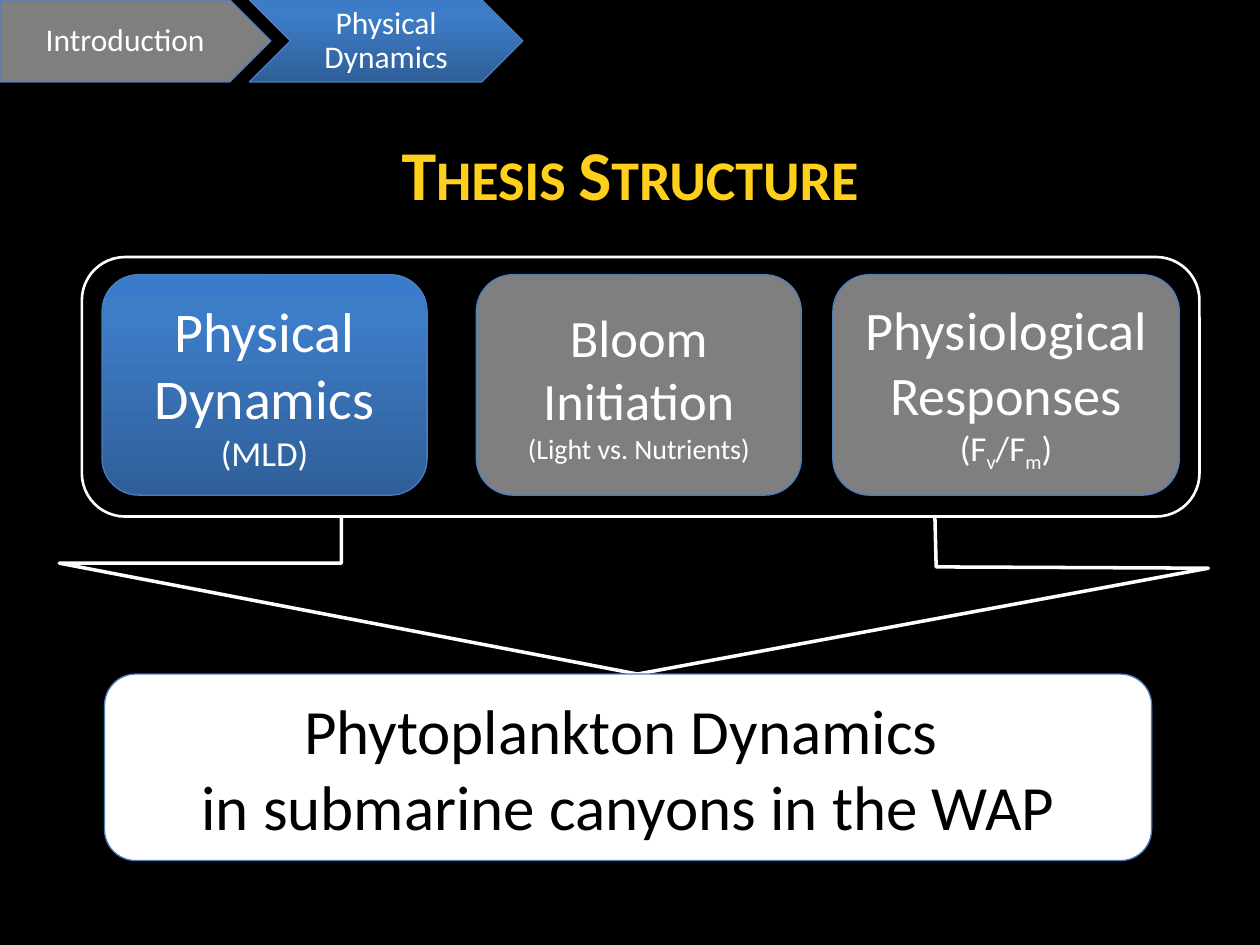
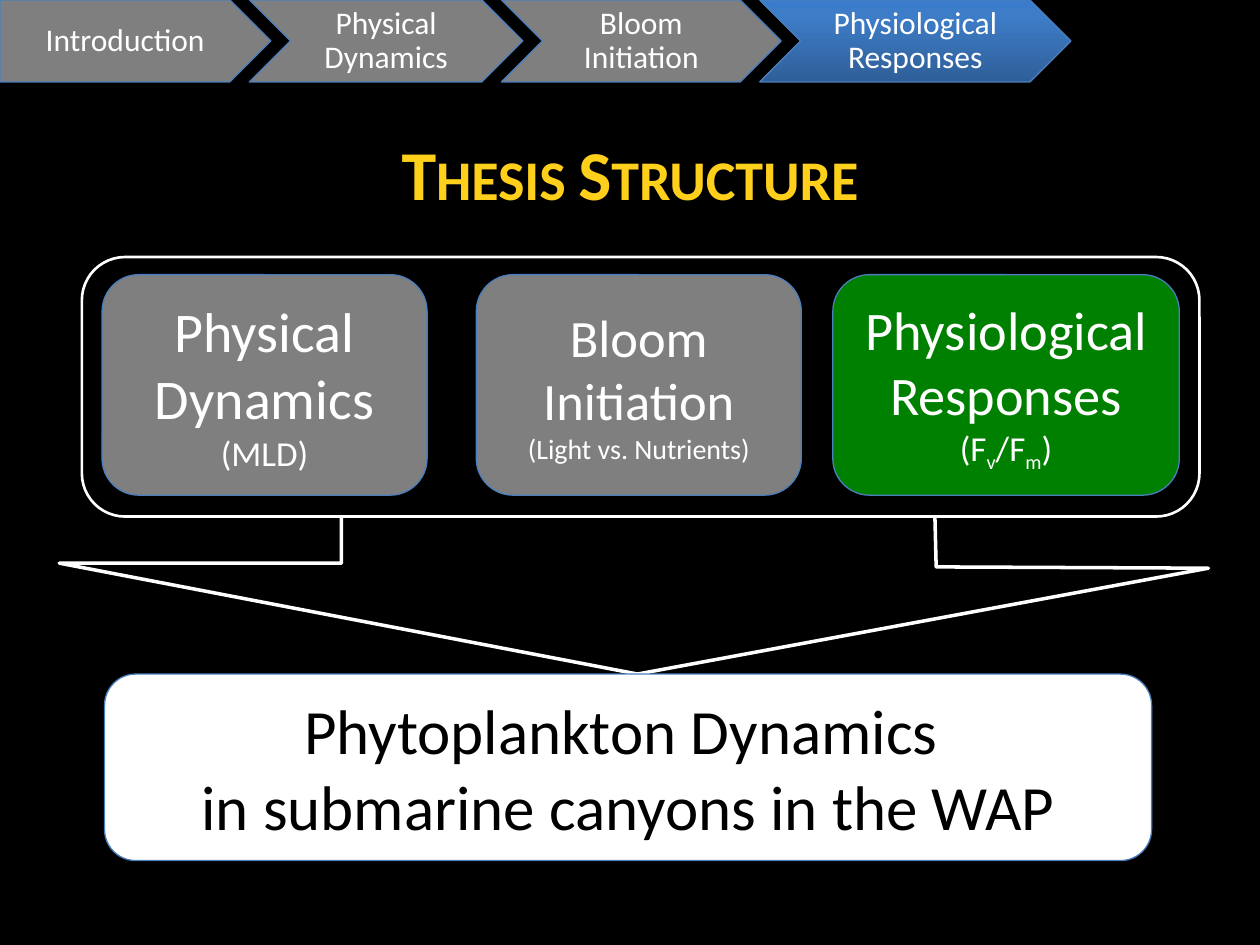
"""Build two thesis-structure slides with a growing chapter trail."""
from copy import deepcopy

from pptx import Presentation
from pptx.dml.color import RGBColor
from pptx.enum.shapes import MSO_SHAPE as Shape
from pptx.enum.text import MSO_ANCHOR as Anchor, PP_ALIGN as Align
from pptx.oxml.ns import qn
from pptx.util import Inches, Pt

TITLE = "Thesis Structure"
CHAPTERS = [
    (["Introduction"], 2.15),
    (["Physical Dynamics"], 2.17),
    (["Bloom", "Initiation"], 2.22),
    (["Physiological Responses"], 2.47),
]
TOPICS = [
    (0.81, 2.58, [(["Physical Dynamics"], 32), (["(MLD)"], 20)]),
    (3.78, 2.58, [(["Bloom Initiation"], 30), (["(Light vs. Nutrients)"], 16)]),
    (6.61, 2.75, [(["Physiological Responses"], 31),
                  (["(F", "_v", "/F", "_m", ")"], 20)]),
]
GOAL = [(["Phytoplankton Dynamics "], 36), (["in submarine canyons in the WAP"], 36)]
FUNNEL = [(2.71, 4.11), (2.71, 4.47), (0.47, 4.47), (5.06, 5.35),
          (9.59, 4.51), (7.43, 4.5), (7.42, 4.11)]

BLACK, WHITE, GRAY, GREEN = "000000", "FFFFFF", "7F7F7F", "008000"
GOLD, EDGE = "FFD01B", "4B7EBC"
BLUE = [(0, "2F5F99"), (0.8, "3D7CC7"), (1, "3A7CCB")]
SLIDES = [
    {"shown": 2, "topic fills": [BLUE, GRAY, GRAY]},
    {"shown": 4, "topic fills": [GRAY, GRAY, GREEN]},
]
TRAIL_HEIGHT, TRAIL_OVERLAP = 0.65, 0.17
TOPIC_TOP, TOPIC_HEIGHT = 2.18, 1.75


def rgb(color):
    """Turn a hex string into a colour."""
    return RGBColor.from_string(color)


def apply(target, values):
    """Set each attribute named in a dict."""
    for name, value in values.items():
        setattr(target, name, value)


def paint(shape, fill, edge=EDGE, weight=0.75):
    """Give a shape its fill and outline, without a shadow."""
    shape.shadow.inherit = False
    shape.line.color.rgb = rgb(edge)
    shape.line.width = Pt(weight)
    if fill is None:
        shape.fill.background()
    elif isinstance(fill, str):
        shape.fill.solid()
        shape.fill.fore_color.rgb = rgb(fill)
    else:
        shape.fill.gradient()
        shape.fill.gradient_angle = 90
        stops = shape._element.spPr.find(".//" + qn("a:gsLst"))
        stops.append(deepcopy(stops[-1]))
        for stop, (position, color) in zip(shape.fill.gradient_stops, fill):
            stop.position = position
            stop.color.rgb = rgb(color)


def write(shape, lines, color=WHITE, spacing=None):
    """Write centred lines; a leading underscore marks a subscript."""
    frame = shape.text_frame
    apply(frame, {"word_wrap": True, "vertical_anchor": Anchor.MIDDLE})
    for index, (parts, size) in enumerate(lines):
        line = frame.add_paragraph() if index else frame.paragraphs[0]
        apply(line, {"alignment": Align.CENTER, "line_spacing": spacing})
        for part in parts:
            run = line.add_run()
            run.text = part.removeprefix("_")
            apply(run.font, {"name": "Calibri", "size": Pt(size)})
            run.font.color.rgb = rgb(color)
            if part.startswith("_"):
                run.font._element.set("baseline", "-25000")


def add_block(slide, kind, box, fill, lines=(), color=WHITE, spacing=None, **outline):
    """Add a painted preset shape with text."""
    block = slide.shapes.add_shape(kind, *map(Inches, box))
    paint(block, fill, **outline)
    write(block, lines, color, spacing)


def add_title(slide):
    """Place and format the slide title."""
    title = slide.shapes.title
    apply(title, dict(zip(("left", "top", "width", "height"),
                          map(Inches, (0.5, 0.82, 9, 1.1)))))
    write(title, [([TITLE], 40)], GOLD)
    font = title.text_frame.paragraphs[0].runs[0].font
    font.bold = True
    font._element.set("cap", "small")


def add_funnel(slide):
    """Draw the open outline leading to the goal."""
    start, *corners = [tuple(map(Inches, point)) for point in FUNNEL]
    builder = slide.shapes.build_freeform(*start)
    builder.add_line_segments(corners, close=False)
    paint(builder.convert_to_shape(), None, WHITE, 2)


def add_trail(slide, shown):
    """Draw the chapter trail with the last chapter highlighted."""
    left = 0
    for index, (names, width) in enumerate(CHAPTERS[:shown]):
        add_block(slide, Shape.CHEVRON if index else Shape.PENTAGON,
                  (left, 0, width, TRAIL_HEIGHT),
                  BLUE if index == shown - 1 else GRAY,
                  [([name], 18) for name in names], spacing=0.9)
        left += width - TRAIL_OVERLAP


def main():
    """Build and save the deck."""
    deck = Presentation()
    apply(deck, {"slide_width": Inches(10), "slide_height": Inches(7.5)})
    backdrop = deck.slide_master.background.fill
    backdrop.solid()
    backdrop.fore_color.rgb = rgb(BLACK)
    for plan in SLIDES:
        slide = deck.slides.add_slide(deck.slide_layouts[5])
        add_title(slide)
        add_funnel(slide)
        for (left, width, lines), fill in zip(TOPICS, plan["topic fills"]):
            add_block(slide, Shape.ROUNDED_RECTANGLE,
                      (left, TOPIC_TOP, width, TOPIC_HEIGHT), fill, lines)
        add_block(slide, Shape.ROUNDED_RECTANGLE, (0.83, 5.35, 8.31, 1.48),
                  WHITE, GOAL, BLACK)
        add_block(slide, Shape.ROUNDED_RECTANGLE, (0.65, 2.04, 8.87, 2.06),
                  None, edge=WHITE, weight=1.5)
        add_trail(slide, plan["shown"])
    deck.save("out.pptx")


if __name__ == "__main__":
    main()
